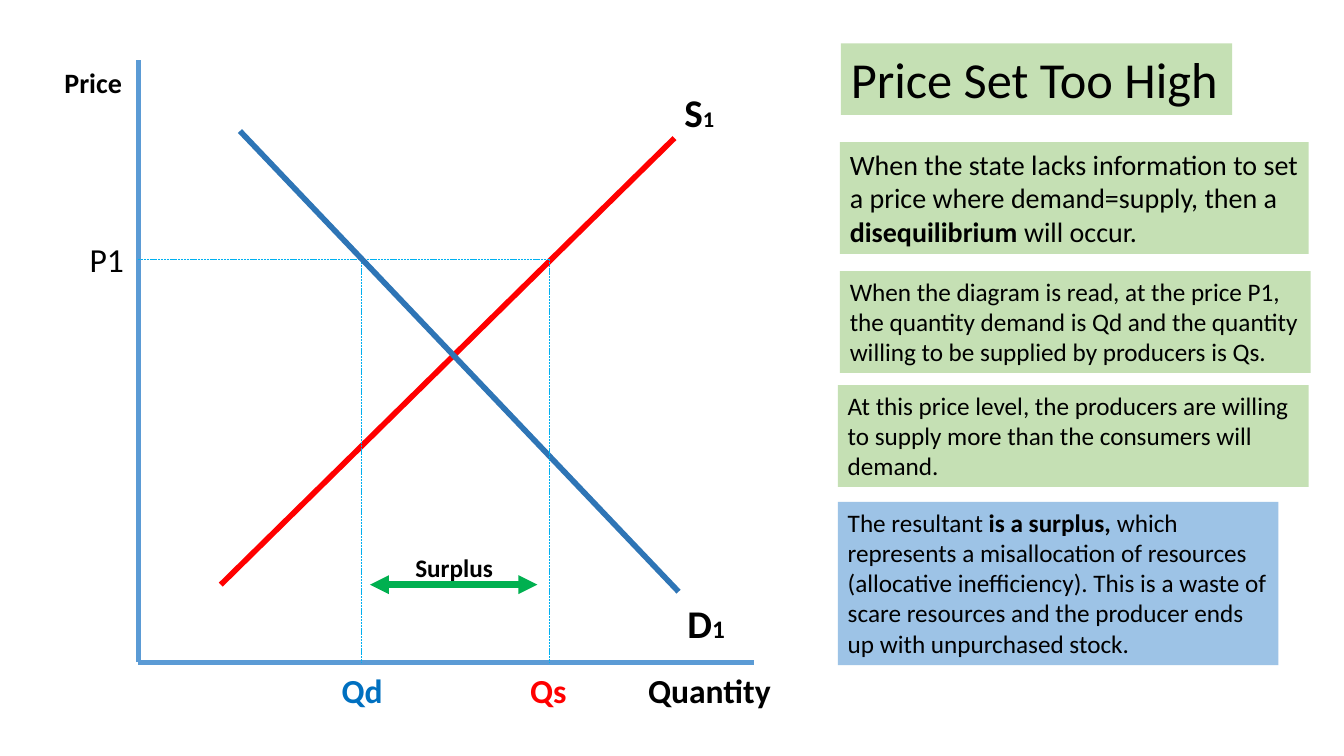
from dataclasses import dataclass

from lxml.etree import SubElement
from pptx import Presentation
from pptx.dml.color import RGBColor
from pptx.enum.dml import MSO_LINE
from pptx.enum.shapes import MSO_CONNECTOR, MSO_SHAPE
from pptx.enum.text import MSO_ANCHOR, MSO_AUTO_SIZE, PP_ALIGN
from pptx.oxml.ns import qn
from pptx.slide import Slide
from pptx.text.text import TextFrame
from pptx.util import Inches, Pt

COLORS = {
    "text": "000000",
    "axis": "5B9BD5",
    "supply": "FF0000",
    "demand": "2E75B6",
    "demand_label": "0070C0",
    "guide": "00B0F0",
    "surplus": "00B050",
    "green_panel": "C5E0B4",
    "blue_panel": "9DC3E6",
}
FONT = "Calibri"

# Key positions of the diagram, in inches
AXIS_X, AXIS_TOP, AXIS_Y, AXIS_RIGHT = 1.37, 0.6, 6.57, 7.48
PRICE_Y, DEMAND_X, SUPPLY_X = 2.57, 3.58, 5.45
QUANTITY_LABEL_Y, SURPLUS_Y = 6.6, 5.8


@dataclass(frozen=True)
class Span:
    text: str
    size: float
    bold: bool = False
    color: str = "text"


@dataclass(frozen=True)
class Line:
    start: tuple[float, float]
    end: tuple[float, float]
    color: str
    width: float
    dashed: bool = False
    arrows: bool = False


@dataclass(frozen=True)
class Label:
    left: float
    top: float
    width: float
    height: float
    spans: tuple[Span, ...]


@dataclass(frozen=True)
class Panel(Label):
    fill: str = "green_panel"


LINES = (
    Line((AXIS_X, AXIS_TOP), (AXIS_X, AXIS_Y), "axis", 3.5),
    Line((AXIS_X, AXIS_Y), (AXIS_RIGHT, AXIS_Y), "axis", 3.5),
    Line((2.19, 5.8), (6.69, 1.37), "supply", 4),
    Line((AXIS_X, PRICE_Y), (SUPPLY_X, PRICE_Y), "guide", 0.5, dashed=True),
    Line((DEMAND_X, PRICE_Y), (DEMAND_X, AXIS_Y), "guide", 0.5, dashed=True),
    Line((6.73, 5.87), (2.38, 1.3), "demand", 4),
    Line((SUPPLY_X, PRICE_Y), (SUPPLY_X, AXIS_Y), "guide", 0.5, dashed=True),
    Line((3.67, SURPLUS_Y), (5.33, SURPLUS_Y), "surplus", 4.5, arrows=True),
)

LABELS = (
    Label(0.54, 0.6, 0.78, 0.44, (Span("Price", 20, True),)),
    Label(6.33, QUANTITY_LABEL_Y, 1.43, 0.5, (Span("Quantity", 24, True),)),
    Label(6.69, 0.83, 0.5, 0.57, (Span("S", 28, True), Span("1", 16, True))),
    Label(6.72, 5.9, 0.58, 0.57, (Span("D", 28, True), Span("1", 18, True))),
    Label(0.79, 2.32, 0.55, 0.5, (Span("P1", 24),)),
    Label(3.29, QUANTITY_LABEL_Y, 0.61, 0.5, (Span("Qd", 24, True, "demand_label"),)),
    Label(5.16, QUANTITY_LABEL_Y, 0.57, 0.5, (Span("Qs", 24, True, "supply"),)),
    Label(4.02, 5.43, 0.98, 0.4, (Span("Surplus", 18, True),)),
)

PANELS = (
    Panel(8.34, 0.43, 3.88, 0.71, (Span("Price Set Too High", 36),)),
    Panel(8.33, 1.41, 4.65, 1.11, (
        Span("When the state lacks information to set a price where "
             "demand=supply, then a ", 20),
        Span("disequilibrium ", 20, True),
        Span("will occur.", 20),
    )),
    Panel(8.33, 2.69, 4.67, 1.01, (
        Span("When the diagram is read, at the price P1, the quantity demand is Qd "
             "and the quantity willing to be supplied by producers is Qs.", 18),
    )),
    Panel(8.31, 3.82, 4.67, 1.01, (
        Span("At this price level, the producers are willing to supply more than "
             "the consumers will demand.", 18),
    )),
    Panel(8.31, 4.98, 4.37, 1.62, (
        Span("The resultant ", 18),
        Span("is a surplus, ", 18, True),
        Span("which represents a misallocation of resources (allocative "
             "inefficiency). This is a waste of scare resources and the producer "
             "ends up with unpurchased stock.", 18),
    ), fill="blue_panel"),
)


def color_of(name: str) -> RGBColor:
    return RGBColor.from_string(COLORS[name])


def write_spans(frame: TextFrame, spans: tuple[Span, ...], wrap: bool) -> None:
    frame.word_wrap = wrap
    frame.auto_size = MSO_AUTO_SIZE.SHAPE_TO_FIT_TEXT
    frame.vertical_anchor = MSO_ANCHOR.TOP
    para = frame.paragraphs[0]
    para.alignment = PP_ALIGN.LEFT
    for span in spans:
        run = para.add_run()
        run.text = span.text
        run.font.name = FONT
        run.font.size = Pt(span.size)
        run.font.bold = span.bold
        run.font.color.rgb = color_of(span.color)


def draw_line(page: Slide, line: Line) -> None:
    connector = page.shapes.add_connector(
        MSO_CONNECTOR.STRAIGHT, *map(Inches, line.start + line.end))
    connector.line.color.rgb = color_of(line.color)
    connector.line.width = Pt(line.width)
    if line.dashed:
        connector.line.dash_style = MSO_LINE.SQUARE_DOT
    properties = connector.element.spPr
    if line.arrows:
        outline = properties.find(qn("a:ln"))
        for end in ("a:headEnd", "a:tailEnd"):
            SubElement(outline, qn(end), type="triangle")
    SubElement(properties, qn("a:effectLst"))


def draw_label(page: Slide, label: Label) -> None:
    box = page.shapes.add_textbox(
        *map(Inches, (label.left, label.top, label.width, label.height)))
    write_spans(box.text_frame, label.spans, wrap=False)


def draw_panel(page: Slide, panel: Panel) -> None:
    box = page.shapes.add_shape(
        MSO_SHAPE.RECTANGLE,
        *map(Inches, (panel.left, panel.top, panel.width, panel.height)))
    box.shadow.inherit = False
    box.fill.solid()
    box.fill.fore_color.rgb = color_of(panel.fill)
    box.line.fill.background()
    write_spans(box.text_frame, panel.spans, wrap=True)


def main() -> None:
    deck = Presentation()
    deck.slide_width, deck.slide_height = Inches(13.33), Inches(7.5)
    page = deck.slides.add_slide(deck.slide_layouts[6])
    for line in LINES:
        draw_line(page, line)
    for label in LABELS:
        draw_label(page, label)
    for panel in PANELS:
        draw_panel(page, panel)
    deck.save("out.pptx")


if __name__ == "__main__":
    main()
